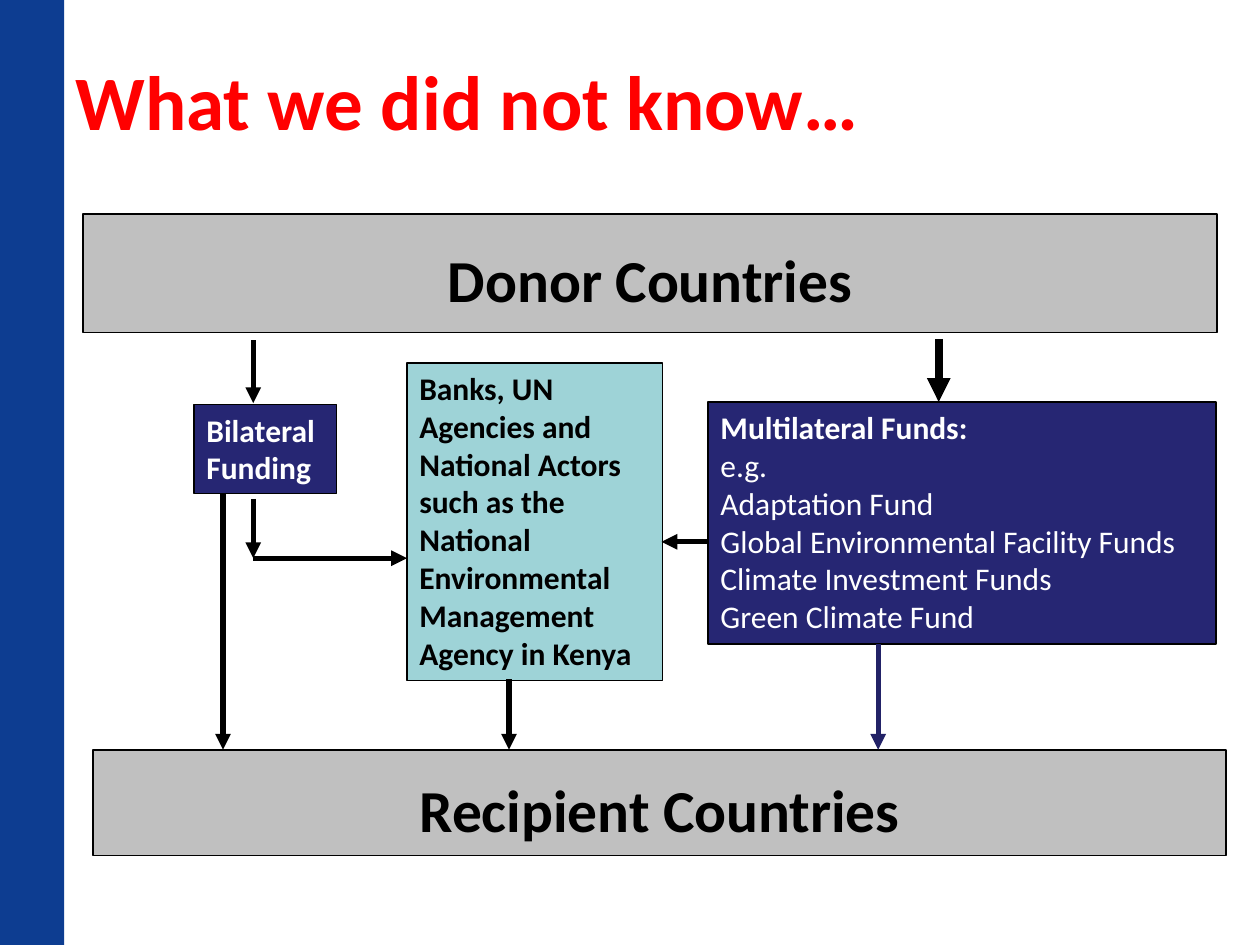
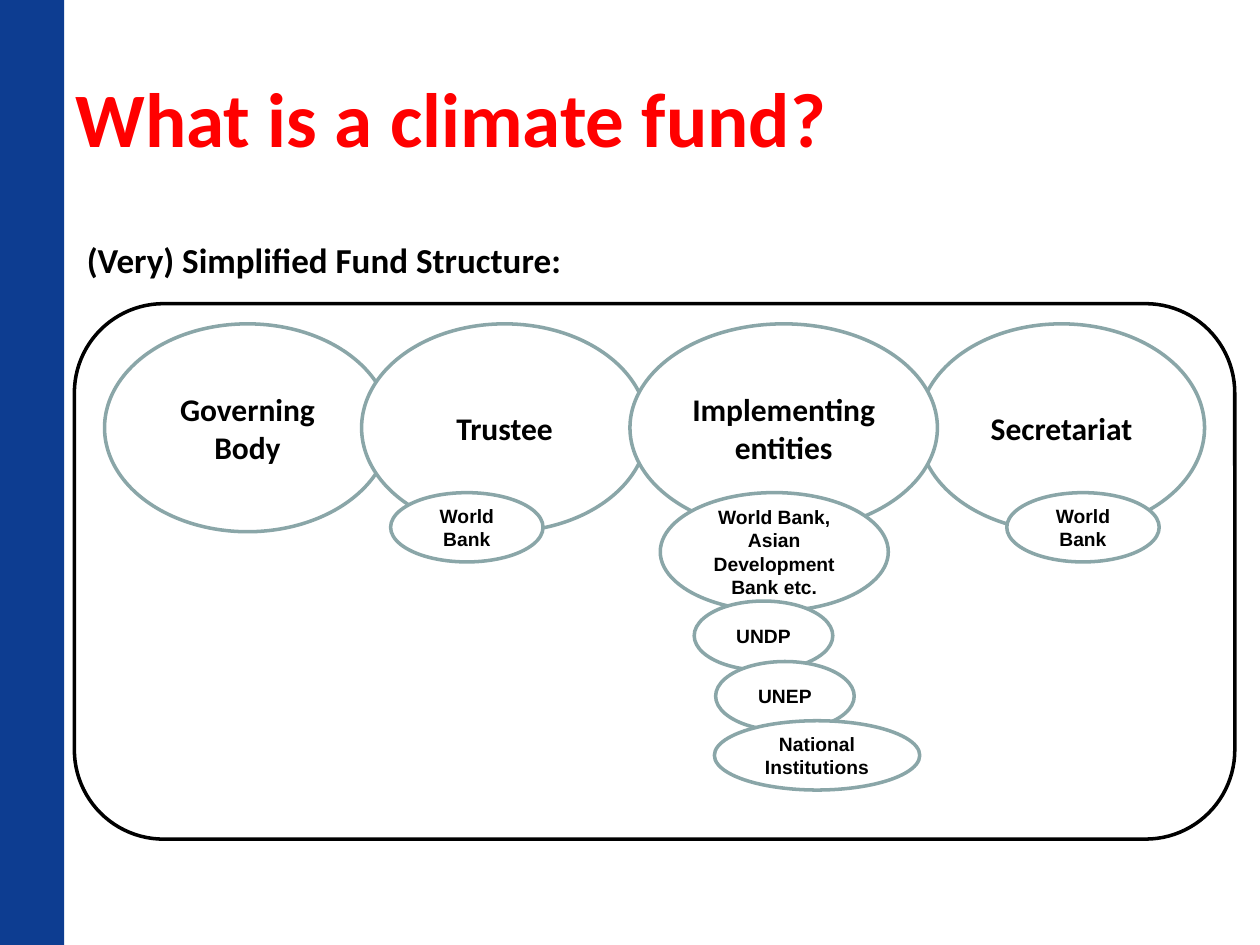
"""Build two slides on how climate funds flow and how a fund is set up."""
from lxml import etree
from pptx import Presentation
from pptx.dml.color import RGBColor
from pptx.enum.shapes import MSO_CONNECTOR, MSO_SHAPE
from pptx.enum.text import MSO_ANCHOR, PP_ALIGN
from pptx.oxml.ns import qn
from pptx.util import Inches, Pt

RECT, OVAL, ROUND = MSO_SHAPE.RECTANGLE, MSO_SHAPE.OVAL, MSO_SHAPE.ROUNDED_RECTANGLE
STRAIGHT = MSO_CONNECTOR.STRAIGHT
LEFT, CENTER = PP_ALIGN.LEFT, PP_ALIGN.CENTER
TOP, MIDDLE = MSO_ANCHOR.TOP, MSO_ANCHOR.MIDDLE
HEX = {
    "band": "0D3D91", "title": "FF0000", "black": "000000", "white": "FFFFFF",
    "gray": "C0C0C0", "navy": "262673", "aqua": "9ED3D7", "ring": "8AA6A8",
    "arrow": "222267",
}
COLOR = {name: RGBColor.from_string(code) for name, code in HEX.items()}


def style(frame, text, size, ink="black", align=CENTER, face="Calibri"):
    frame.text = text
    frame.word_wrap = True
    for para in frame.paragraphs:
        para.alignment = align
        font = para.font
        font.name, font.size, font.bold = face, Pt(size), True
        font.color.rgb = COLOR[ink]


def add_box(slide, kind, place, fill, line, width):
    box = slide.shapes.add_shape(kind, *map(Inches, place))
    box.shadow.inherit = False
    box.fill.solid()
    box.fill.fore_color.rgb = COLOR[fill]
    box.line.color.rgb = COLOR[line]
    box.line.width = Pt(width)
    return box


deck = Presentation()
deck.slide_width, deck.slide_height = Inches(10), Inches(7.5)
slides = []
for text, place in [
    ("What we did not know…", (0.5, 0.21, 9.3, 1.17)),
    ("What is a climate fund?", (0.5, 0.3, 9, 1.25)),
]:
    slide = deck.slides.add_slide(deck.slide_layouts[5])
    title = slide.shapes.title
    title.left, title.top, title.width, title.height = map(Inches, place)
    style(title.text_frame, text, 44, "title", LEFT)
    title.text_frame.vertical_anchor = MIDDLE
    slides.append(slide)
flow, fund = slides

# The band moves to the slide master, so both slides share it.
band = add_box(flow, RECT, (0, 0, 0.51, 7.5), "band", "band", 0)
band.line.fill.background()
band.element.nvSpPr.cNvPr.id = 20
deck.slide_master.shapes.element.insert(2, band.element)

for text, place in [
    ("Donor Countries", (0.66, 1.7, 9, 0.94)),
    ("Recipient Countries", (0.74, 5.95, 8.99, 0.84)),
]:
    frame = add_box(flow, RECT, place, "gray", "black", 1).text_frame
    style(frame, text, 34)
    frame.margin_top = Inches(0.14)

funds = "\n".join([
    "Multilateral Funds:", "e.g.", "Adaptation Fund",
    "Global Environmental Facility Funds", "Climate Investment Funds",
    "Green Climate Fund",
])
banks = ("Banks, UN Agencies and National Actors such as the National "
         "Environmental Management Agency in Kenya")
for text, place, fill, ink, width in [
    (banks, (3.23, 2.88, 2.03, 2.52), "aqua", "black", 0.75),
    ("Bilateral\nFunding", (1.54, 3.21, 1.13, 0.71), "navy", "white", 0.75),
    (funds, (5.62, 3.19, 4.03, 1.92), "navy", "white", 1),
]:
    frame = add_box(flow, RECT, place, fill, "black", width).text_frame
    style(frame, text, 18, ink, LEFT)
    frame.vertical_anchor = TOP
for para in frame.paragraphs[1:]:
    para.font.bold = False

for ends, ink, width in [
    ((7.45, 2.69, 7.45, 3.19), "black", 4.5),
    ((2.01, 2.7, 2.01, 3.2), "black", 3),
    ((5.62, 4.3, 5.25, 4.3), "black", 3),
    ((2.01, 4.43, 3.23, 4.43), "black", 3),
    ((4.04, 5.39, 4.04, 5.95), "black", 3),
    ((2.01, 3.96, 2.01, 4.43), "black", 3),
    ((1.77, 3.91, 1.77, 5.95), "black", 3),
    ((6.97, 5.11, 6.97, 5.95), "arrow", 3),
]:
    arrow = flow.shapes.add_connector(STRAIGHT, *map(Inches, ends))
    arrow.line.color.rgb = COLOR[ink]
    arrow.line.width = Pt(width)
    etree.SubElement(arrow.line._get_or_add_ln(), qn("a:tailEnd"), type="triangle")
    etree.SubElement(arrow.element.spPr, qn("a:effectLst"))

add_box(fund, ROUND, (0.59, 2.41, 9.21, 4.25), "white", "black", 2)
label = add_box(fund, RECT, (0.59, 1.62, 9.21, 0.71), "white", "white", 2)
style(label.text_frame, "(Very) Simplified Fund Structure:", 20, align=LEFT)
label.text_frame.paragraphs[0].line_spacing = 1.5

for text, left, width in [
    ("Secretariat", 7.29, 2.27),
    ("Governing Body", 0.83, 2.27),
    ("Trustee", 2.87, 2.27),
    ("Implementing entities", 5, 2.44),
]:
    part = add_box(fund, OVAL, (left, 2.57, width, 1.65), "white", "ring", 2)
    style(part.text_frame, text, 18)

for text, place in [
    ("World Bank", (3.1, 3.91, 1.21, 0.55)),
    ("World Bank, Asian Development Bank etc.", (5.24, 3.91, 1.81, 0.94)),
    ("UNDP", (5.51, 4.77, 1.1, 0.55)),
    ("UNEP", (5.68, 5.25, 1.1, 0.55)),
    ("National Institutions", (5.67, 5.72, 1.63, 0.55)),
    ("World Bank", (7.99, 3.91, 1.21, 0.55)),
]:
    body = add_box(fund, OVAL, place, "white", "ring", 2)
    style(body.text_frame, text, 11, face="Arial")

deck.save("out.pptx")
